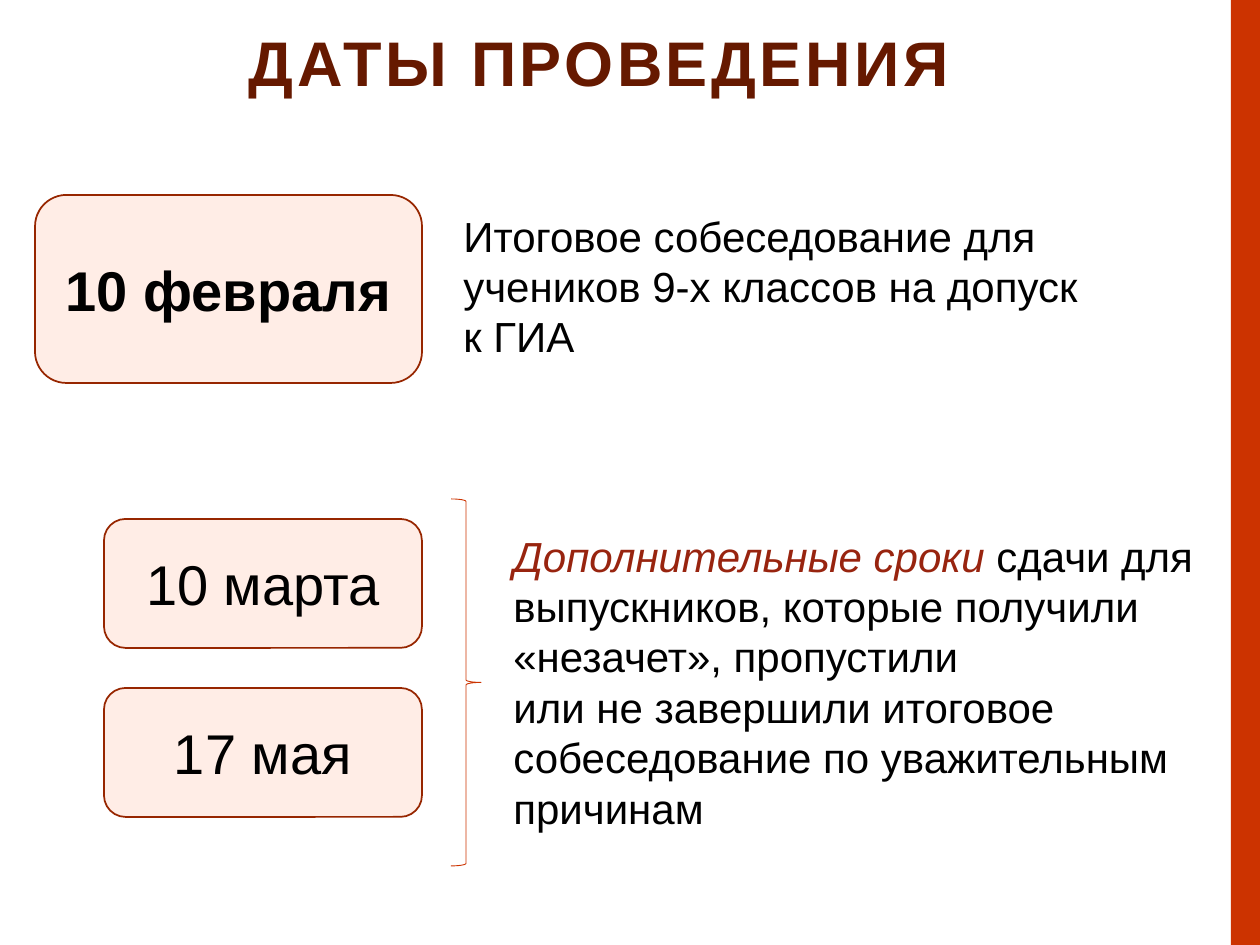
from pptx import Presentation
from pptx.dml.color import RGBColor
from pptx.enum.shapes import MSO_SHAPE
from pptx.enum.text import MSO_ANCHOR, PP_ALIGN
from pptx.util import Emu, Pt

SCALE = 914400 / 126
BLACK, RED, DARK_RED = "000000", "CC3300", "972600"
DATE_RIGHT = 422


def px(n):
    """Turn px into EMU."""
    return Emu(round(n * SCALE))


def rgb(value):
    """Turn a hex string into a colour."""
    return RGBColor.from_string(value)


def add_run(p, text, color=BLACK, **fmt):
    """Add a run with its font format."""
    r = p.add_run()
    r.text = text
    for name, value in {"name": "Arial", "size": Pt(24), **fmt}.items():
        setattr(r.font, name, value)
    r.font.color.rgb = rgb(color)
    return r


def add_shape(slide, kind, box, fill=None, line=None, width=1):
    """Add a preset shape with a plain fill and line."""
    sp = slide.shapes.add_shape(kind, *map(px, box))
    sp.shadow.inherit = False
    if fill:
        sp.fill.solid()
        sp.fill.fore_color.rgb = rgb(fill)
    else:
        sp.fill.background()
    if line:
        sp.line.color.rgb = rgb(line)
        sp.line.width = Pt(width)
    else:
        sp.line.fill.background()
    return sp


def add_date(slide, text, top, width, height, bold=False):
    """Add a rounded date card that ends at the common right edge."""
    box = (DATE_RIGHT - width, top, width, height)
    sp = add_shape(slide, MSO_SHAPE.ROUNDED_RECTANGLE, box, "FFEDE6", DARK_RED)
    tf = sp.text_frame
    tf.vertical_anchor = MSO_ANCHOR.MIDDLE
    p = tf.paragraphs[0]
    p.alignment = PP_ALIGN.CENTER
    add_run(p, text, size=Pt(32), bold=bold)


def add_text(slide, box, paragraphs):
    """Add a wrapped text box from lists of (text, format) runs."""
    tf = slide.shapes.add_textbox(*map(px, box)).text_frame
    tf.word_wrap = True
    for i, runs in enumerate(paragraphs):
        p = tf.add_paragraph() if i else tf.paragraphs[0]
        for text, fmt in runs:
            add_run(p, text, **fmt)
    return tf


def add_title(slide, text):
    """Add the centred, letter-spaced title."""
    fmt = {"color": "661900", "size": Pt(36), "bold": True}
    p = add_text(slide, (4, 26, 1190, 149), [[(text, fmt)]]).paragraphs[0]
    p.alignment = PP_ALIGN.CENTER
    p.line_spacing = 0.9
    p.runs[0].font._element.set("spc", "200")


def main():
    """Build the slide and save it."""
    prs = Presentation()
    prs.slide_width, prs.slide_height = px(1260), px(945)
    slide = prs.slides.add_slide(prs.slide_layouts[6])

    add_shape(slide, MSO_SHAPE.RECTANGLE, (1231, 0, 29, 945), RED)
    add_title(slide, "ДАТЫ ПРОВЕДЕНИЯ")
    add_date(slide, "10 февраля", 195, 387, 188, bold=True)
    for i, date in enumerate(("10 марта", "17 мая")):
        add_date(slide, date, 519 + 169 * i, 318, 129)

    add_text(slide, (451, 204, 753, 165), [
        [("Итоговое собеседование для учеников 9-х классов на допуск", {})],
        [("к ГИА", {})],
    ])
    add_text(slide, (501, 524, 728, 318), [
        [("Дополнительные сроки ", {"color": "98240F", "italic": True}),
         ("сдачи для выпускников, которые получили «незачет», пропустили", {})],
        [("или не завершили итоговое собеседование по уважительным причинам", {})],
    ])
    add_shape(slide, MSO_SHAPE.RIGHT_BRACE, (451, 499, 30, 367), line=RED, width=0.5)
    prs.save("out.pptx")


if __name__ == "__main__":
    main()
